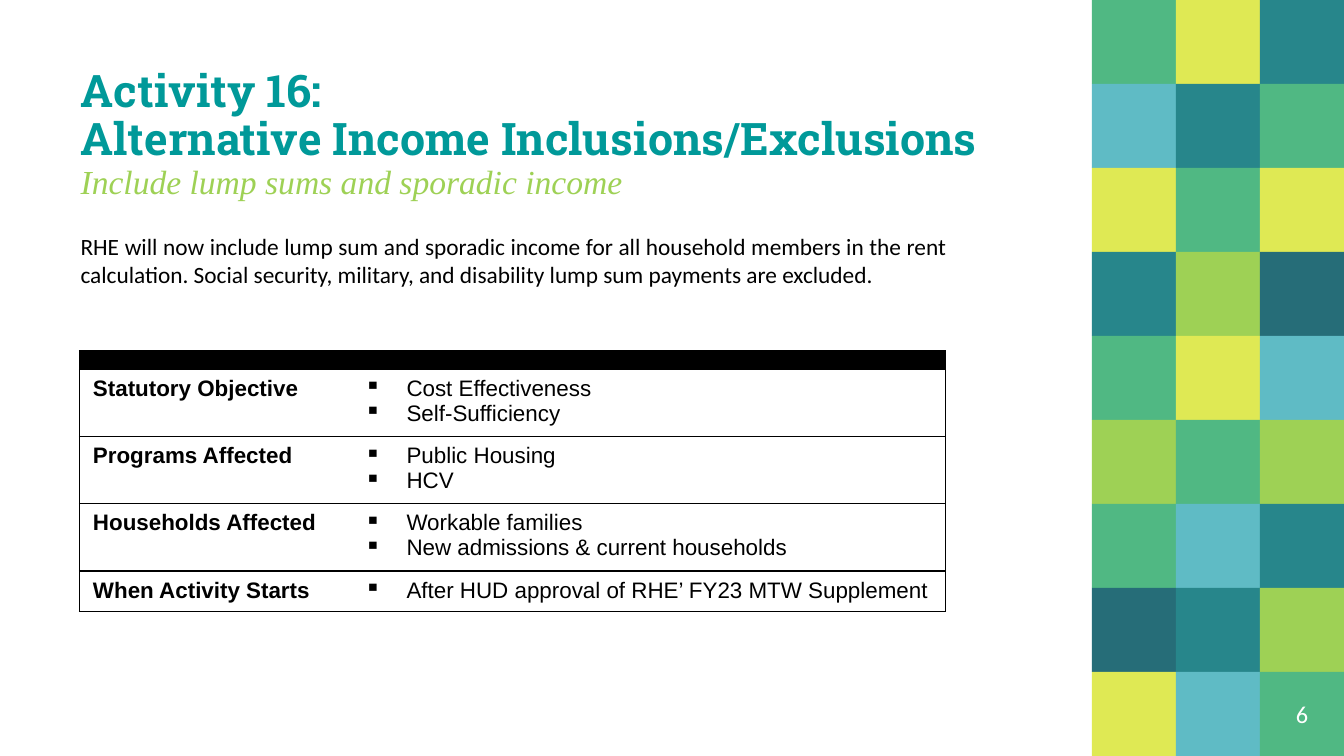
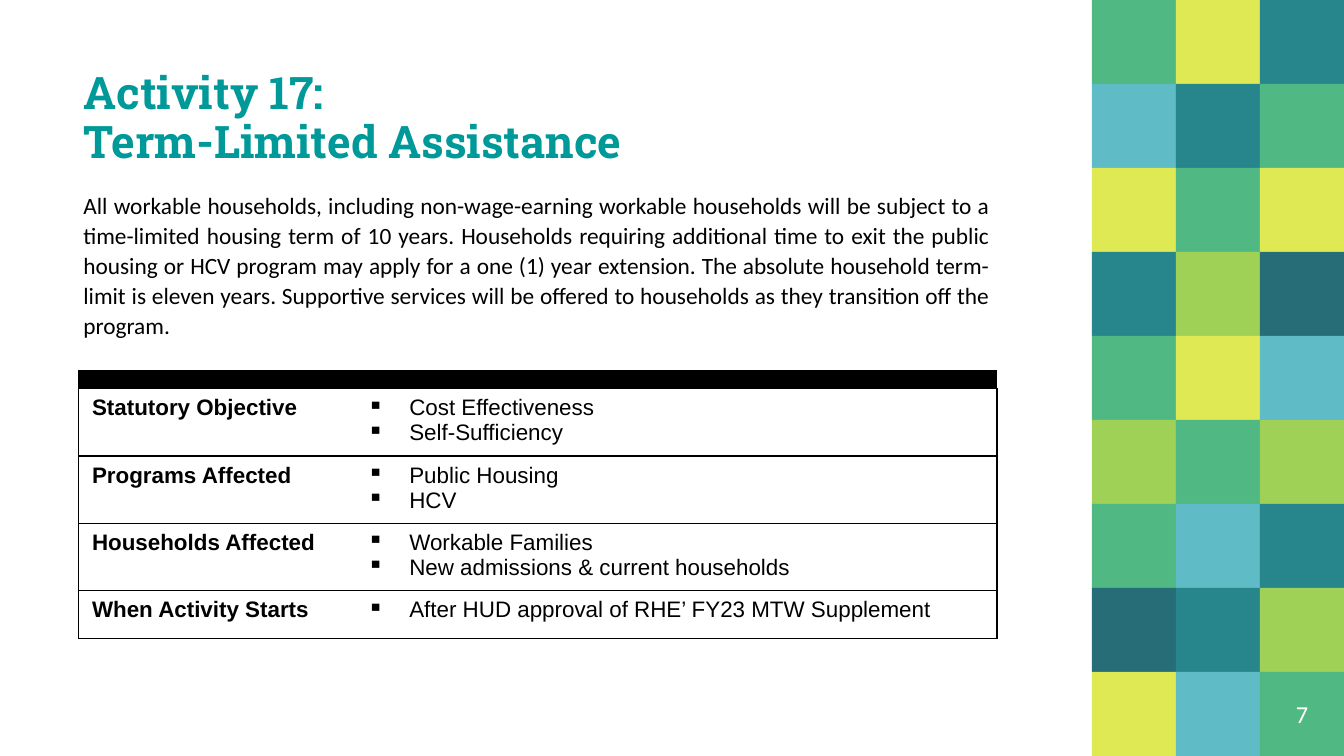
import copy

import pptx
import pptx.dml.color
import pptx.enum.shapes
import pptx.enum.text
import pptx.oxml
import pptx.oxml.ns
import pptx.util
from lxml import etree

Pt = pptx.util.Pt
RGB = pptx.dml.color.RGBColor
ALIGN = pptx.enum.text.PP_ALIGN
ANCHOR = pptx.enum.text.MSO_ANCHOR
qn = pptx.oxml.ns.qn

BLACK = RGB(0x00, 0x00, 0x00)
WHITE = RGB(0xFF, 0xFF, 0xFF)
TITLE = RGB(0x00, 0x99, 0x99)
LIME = RGB(0x9E, 0xD1, 0x55)
TILES = {
    "L": LIME,
    "D": RGB(0x26, 0x6D, 0x78),
    "Y": RGB(0xDF, 0xE9, 0x54),
    "G": RGB(0x50, 0xB8, 0x83),
    "T": RGB(0x27, 0x86, 0x8B),
    "B": RGB(0x5F, 0xBB, 0xC5),
}
MOSAIC = ["GYT", "BTG", "YGY", "TLD", "GYB", "LGL", "GBT", "DTL", "YBG"]
SIDE = 45
EDGE = 585

PAGES = [
    dict(
        page="6", left=36, title_height=85.7,
        title="Activity 16:\nAlternative Income Inclusions/Exclusions",
        sub="Include lump sums and sporadic income",
        body="RHE will now include lump sum and sporadic income for all household "
             "members in the rent calculation. Social security, military, and "
             "disability lump sum payments are excluded.",
        body_box=(124.5, 471, 49.5), leading=1.0,
        table_at=(42.6, 188), cols=(145.5, 318.5), last=20.9,
        families="Workable families",
    ),
    dict(
        page="7", left=37.5, title_height=67.7,
        title="Activity 17:\nTerm-Limited Assistance", sub="",
        body="All workable households, including non-wage-earning workable households "
             "will be subject to a time-limited housing term of 10 years. Households "
             "requiring additional time to exit the public housing or HCV program may "
             "apply for a one (1) year extension. The absolute household term-limit is "
             "eleven years. Supportive services will be offered to households as they "
             "transition off the program.",
        body_box=(101.5, 492.5, 84), leading=1.07,
        table_at=(42.1, 198.5), cols=(147.5, 344.5), last=25.7,
        families="Workable Families",
    ),
]


def write(para, words, font="Arial", size=12, color=BLACK, bold=False, italic=False):
    """Add words to a paragraph; a newline becomes a line break."""
    for num, line in enumerate(words.split("\n")):
        if num:
            para.add_line_break()
        if line:
            run = para.add_run()
            run.text = line
            run.font.name = font
            run.font.size = Pt(size)
            run.font.color.rgb = color
            run.font.bold = bold
            run.font.italic = italic


def indent(para, left, first=0):
    props = para._p.get_or_add_pPr()
    props.set("marL", str(Pt(left)))
    props.set("indent", str(Pt(first)))
    return props


deck = pptx.Presentation()
deck.slide_width = Pt(720)
deck.slide_height = Pt(405)
layout = deck.slide_layouts[5]
slides = [deck.slides.add_slide(layout) for item in PAGES]

# Tiles are drawn on a slide, then moved to the shared layout
for row, line in enumerate(MOSAIC):
    for col, key in enumerate(line):
        tile = slides[0].shapes.add_shape(
            pptx.enum.shapes.MSO_SHAPE.RECTANGLE,
            Pt(EDGE + col * SIDE), Pt(row * SIDE), Pt(SIDE), Pt(SIDE))
        tile.shadow.inherit = False
        tile.fill.solid()
        tile.fill.fore_color.rgb = TILES[key]
        tile.line.fill.background()
        layout.shapes.element.append(tile.element)

for slide, data in zip(slides, PAGES):
    # Title
    title = slide.shapes.title
    title.left, title.top = Pt(data["left"]), Pt(29.5)
    title.width, title.height = Pt(544.5), Pt(data["title_height"])
    frame = title.text_frame
    frame.word_wrap = True
    frame.auto_size = pptx.enum.text.MSO_AUTO_SIZE.NONE
    frame.vertical_anchor = ANCHOR.BOTTOM
    frame.margin_left = frame.margin_right = Pt(7.2)
    frame.margin_top = frame.margin_bottom = Pt(7.2)
    para = frame.paragraphs[0]
    para.alignment = ALIGN.LEFT
    para.line_spacing = 0.9
    write(para, data["title"], font="Roboto Slab", size=24, color=TITLE, bold=True)
    if data["sub"]:
        write(para, "\n" + data["sub"], font="Times New Roman", size=18,
              color=LIME, italic=True)
    for gap in list(title.element.iter(qn("a:br"))):
        gap.insert(0, copy.deepcopy(gap.getprevious().find(qn("a:rPr"))))

    # Page number and body text
    top, width, height = data["body_box"]
    number = slide.shapes.add_textbox(Pt(675), Pt(360), Pt(SIDE), Pt(SIDE))
    body = slide.shapes.add_textbox(Pt(data["left"]), Pt(top), Pt(width), Pt(height))
    for box in (number, body):
        frame = box.text_frame
        frame.word_wrap = True
        frame.margin_left = frame.margin_right = 0
        frame.margin_top = frame.margin_bottom = 0
    number.text_frame.vertical_anchor = ANCHOR.MIDDLE
    para = number.text_frame.paragraphs[0]
    para.alignment = ALIGN.CENTER
    write(para, data["page"], font="Calibri", size=13, color=WHITE)
    para = body.text_frame.paragraphs[0]
    indent(para, 7.2)
    para.alignment = ALIGN.JUSTIFY
    para.line_spacing = data["leading"]
    write(para, data["body"], font="Calibri", size=12.5)

    # Table
    facts = [
        ("Statutory Objective", ["Cost Effectiveness", "Self-Sufficiency"]),
        ("Programs Affected", ["Public Housing", "HCV"]),
        ("Households Affected",
         [data["families"], "New admissions & current households"]),
        ("When Activity Starts", ["After HUD approval of RHE’ FY23 MTW Supplement"]),
    ]
    rows = [9.8, 34.2, 34.2, 34.2, data["last"]]
    left, top = data["table_at"]
    table = slide.shapes.add_table(
        len(rows), 2, Pt(left), Pt(top), Pt(sum(data["cols"])), Pt(sum(rows))).table
    table.first_row = table.horz_banding = False
    for col, width in zip(table.columns, data["cols"]):
        col.width = Pt(width)
    for row, height in zip(table.rows, rows):
        row.height = Pt(height)

    for num, row in enumerate(table.rows):
        for cell, bare in zip(row.cells, ("R", "L")):
            props = cell._tc.get_or_add_tcPr()
            for edge in "LRTB":
                line = etree.SubElement(props, qn("a:ln" + edge), w=str(Pt(0.75)))
                if edge == bare:
                    etree.SubElement(line, qn("a:noFill"))
                else:
                    fill = etree.SubElement(line, qn("a:solidFill"))
                    etree.SubElement(fill, qn("a:srgbClr"), val=str(BLACK))
            if num:
                cell.fill.background()
            else:
                cell.fill.solid()
                cell.fill.fore_color.rgb = BLACK
                cell.margin_top = cell.margin_bottom = 0
                para = cell.text_frame.paragraphs[0]
                etree.SubElement(para._p, qn("a:endParaRPr"), sz="100")
    table.cell(0, 0).merge(table.cell(0, 1))

    for num, (label, points) in enumerate(facts, 1):
        write(table.cell(num, 0).text_frame.paragraphs[0], label, bold=True)
        frame = table.cell(num, 1).text_frame
        for spot, point in enumerate(points):
            para = frame.add_paragraph() if spot else frame.paragraphs[0]
            props = indent(para, 22.5, -22.5)
            tint = etree.SubElement(props, qn("a:buClr"))
            etree.SubElement(tint, qn("a:srgbClr"), val=str(BLACK))
            etree.SubElement(props, qn("a:buChar"), char="▪")
            write(para, point)

deck.save("out.pptx")
